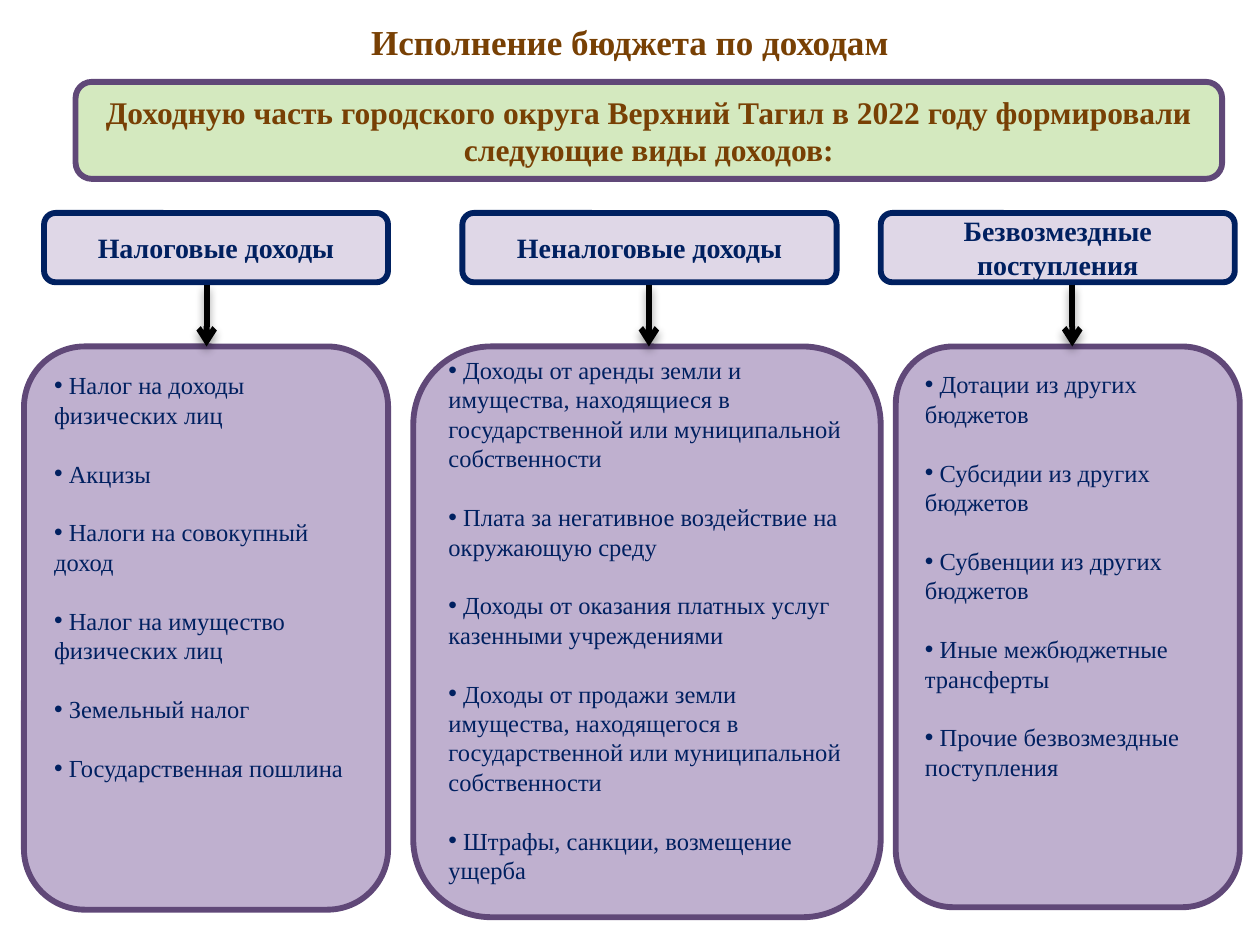
"""Build the slide on budget revenue: a title, a summary and three revenue groups."""
from dataclasses import dataclass
from typing import NamedTuple

from lxml.etree import SubElement
from pptx import Presentation
from pptx.dml.color import RGBColor
from pptx.enum.shapes import MSO_CONNECTOR, MSO_SHAPE
from pptx.enum.text import MSO_ANCHOR, PP_ALIGN
from pptx.oxml.ns import qn
from pptx.shapes.autoshape import Shape
from pptx.slide import Slide
from pptx.util import Emu, Inches, Pt

COLUMNS, ROWS = 100, 75
SLIDE_WIDTH, SLIDE_HEIGHT = Inches(10), Inches(7.5)


@dataclass(frozen=True)
class Theme:
    """Colours, type and line sizes of the slide."""
    font: str = "Times New Roman"
    brown: str = "784004"
    navy: str = "002060"
    plum: str = "604878"
    green: str = "C2E1A5"
    lilac: str = "DFD7E7"
    lavender: str = "BFB0CF"
    black: str = "000000"
    title: float = 20
    summary: float = 18
    heading: float = 16
    body: float = 14
    item_gap: float = 16.8
    outline: float = 3.35


class Area(NamedTuple):
    """A rectangle in grid columns and rows."""
    left: float
    top: float
    width: float
    height: float


class Group(NamedTuple):
    """A revenue group: heading, items and its places on the grid."""
    heading: str
    heading_left: float
    heading_width: float
    list_left: float
    list_width: float
    list_height: float
    arrow: float
    items: list[str]
    anchor: MSO_ANCHOR = MSO_ANCHOR.TOP
    bottom_margin: float = 0.05


THEME = Theme()
HEADING_TOP, HEADING_HEIGHT = 16.9, 5.5
ARROW_TOP, LIST_TOP = 22.6, 27.5

GROUPS = [
    Group("Налоговые доходы", 3.5, 27.3, 1.9, 28.9, 44.7, 16.4, [
        "Налог на доходы физических лиц",
        "Акцизы",
        "Налоги на совокупный доход",
        "Налог на имущество физических лиц",
        "Земельный налог",
        "Государственная пошлина",
    ]),
    Group("Неналоговые доходы", 36.7, 29.7, 32.8, 37.1, 45.3, 51.5, [
        "Доходы от аренды земли и имущества, находящиеся в "
        "государственной или муниципальной собственности",
        "Плата за негативное воздействие на окружающую среду",
        "Доходы от оказания платных услуг казенными учреждениями",
        "Доходы от продажи земли имущества, находящегося в "
        "государственной или муниципальной собственности",
        "Штрафы, санкции, возмещение ущерба",
    ], MSO_ANCHOR.MIDDLE, 0.24),
    Group("Безвозмездные поступления", 69.9, 28.1, 71.1, 27.3, 44.5, 85.1, [
        "Дотации из других бюджетов",
        "Субсидии из других бюджетов",
        "Субвенции из других бюджетов",
        "Иные межбюджетные трансферты",
        "Прочие безвозмездные поступления",
    ]),
]


def across(columns: float) -> Emu:
    """Turn grid columns into a length."""
    return Emu(round(SLIDE_WIDTH * columns / COLUMNS))


def down(rows: float) -> Emu:
    """Turn grid rows into a length."""
    return Emu(round(SLIDE_HEIGHT * rows / ROWS))


def place(area: Area) -> tuple[Emu, Emu, Emu, Emu]:
    """Turn a grid area into slide lengths."""
    return across(area.left), down(area.top), across(area.width), down(area.height)


def write(holder: Shape, lines: list[str], *, size: float, color: str,
          bold: bool = False, align: PP_ALIGN = PP_ALIGN.CENTER,
          anchor: MSO_ANCHOR = MSO_ANCHOR.MIDDLE, bullet: str = "",
          gap: float = 0, bottom_margin: float = 0.05) -> None:
    """Fill a shape with formatted paragraphs."""
    frame = holder.text_frame
    frame.word_wrap = True
    frame.vertical_anchor = anchor
    frame.margin_bottom = Inches(bottom_margin)
    for index, line in enumerate(lines):
        paragraph = frame.add_paragraph() if index else frame.paragraphs[0]
        paragraph.alignment = align
        if index:
            paragraph.space_before = Pt(gap)
        if bullet:
            properties = paragraph._p.get_or_add_pPr()
            SubElement(properties, qn("a:buFont"), typeface="Arial")
            SubElement(properties, qn("a:buChar"), char=bullet)
        run = paragraph.add_run()
        run.text = f" {line}" if bullet else line
        run.font.name = THEME.font
        run.font.size = Pt(size)
        run.font.bold = bold
        run.font.color.rgb = RGBColor.from_string(color)


def add_panel(slide: Slide, area: Area, fill: str, outline: str,
              opacity: int = 100) -> Shape:
    """Draw a rounded panel and return it."""
    panel = slide.shapes.add_shape(MSO_SHAPE.ROUNDED_RECTANGLE, *place(area))
    panel.shadow.inherit = False
    panel.fill.solid()
    panel.fill.fore_color.rgb = RGBColor.from_string(fill)
    panel.line.color.rgb = RGBColor.from_string(outline)
    panel.line.width = Pt(THEME.outline)
    if opacity < 100:
        tint = panel._element.spPr.find(qn("a:solidFill")).find(qn("a:srgbClr"))
        SubElement(tint, qn("a:alpha"), val=str(opacity * 1000))
    return panel


def add_arrow(slide: Slide, column: float) -> None:
    """Draw a shadowed arrow from a heading down to its list."""
    arrow = slide.shapes.add_connector(
        MSO_CONNECTOR.STRAIGHT, across(column), down(ARROW_TOP), across(column), down(LIST_TOP))
    arrow.line.color.rgb = RGBColor.from_string(THEME.black)
    arrow.line.width = Pt(THEME.outline)
    properties = arrow._element.spPr
    SubElement(properties.find(qn("a:ln")), qn("a:tailEnd"), type="arrow")
    effects = SubElement(properties, qn("a:effectLst"))
    shadow = SubElement(effects, qn("a:outerShdw"), blurRad=str(Pt(5.2)),
                        dist=str(Pt(3)), dir="5400000", rotWithShape="0")
    shade = SubElement(shadow, qn("a:srgbClr"), val=THEME.black)
    SubElement(shade, qn("a:alpha"), val="40000")


def add_group(slide: Slide, group: Group) -> None:
    """Draw one revenue group with its heading, list and arrow."""
    heading = add_panel(
        slide, Area(group.heading_left, HEADING_TOP, group.heading_width, HEADING_HEIGHT),
        THEME.lilac, THEME.navy)
    write(heading, [group.heading], size=THEME.heading, color=THEME.navy, bold=True)
    revenues = add_panel(
        slide, Area(group.list_left, LIST_TOP, group.list_width, group.list_height),
        THEME.lavender, THEME.plum)
    write(revenues, group.items, size=THEME.body, color=THEME.navy, align=PP_ALIGN.LEFT,
          anchor=group.anchor, bullet="•", gap=THEME.item_gap,
          bottom_margin=group.bottom_margin)
    add_arrow(slide, group.arrow)


def main() -> None:
    """Build and save the slide."""
    deck = Presentation()
    deck.slide_width, deck.slide_height = SLIDE_WIDTH, SLIDE_HEIGHT
    slide = deck.slides.add_slide(deck.slide_layouts[6])
    title = slide.shapes.add_textbox(*place(Area(0, 0, 100, 6.5)))
    title.text_frame.margin_top = Inches(0.16)
    write(title, ["Исполнение бюджета по доходам"], size=THEME.title, color=THEME.brown,
          bold=True, anchor=MSO_ANCHOR.TOP, bottom_margin=0.16)
    summary = add_panel(slide, Area(6, 6.5, 91, 7.7), THEME.green, THEME.plum, opacity=70)
    write(summary, ["Доходную часть городского округа Верхний Тагил в 2022 году "
                    "формировали следующие виды доходов:"],
          size=THEME.summary, color=THEME.brown, bold=True)
    for group in GROUPS:
        add_group(slide, group)
    deck.save("out.pptx")


if __name__ == "__main__":
    main()
